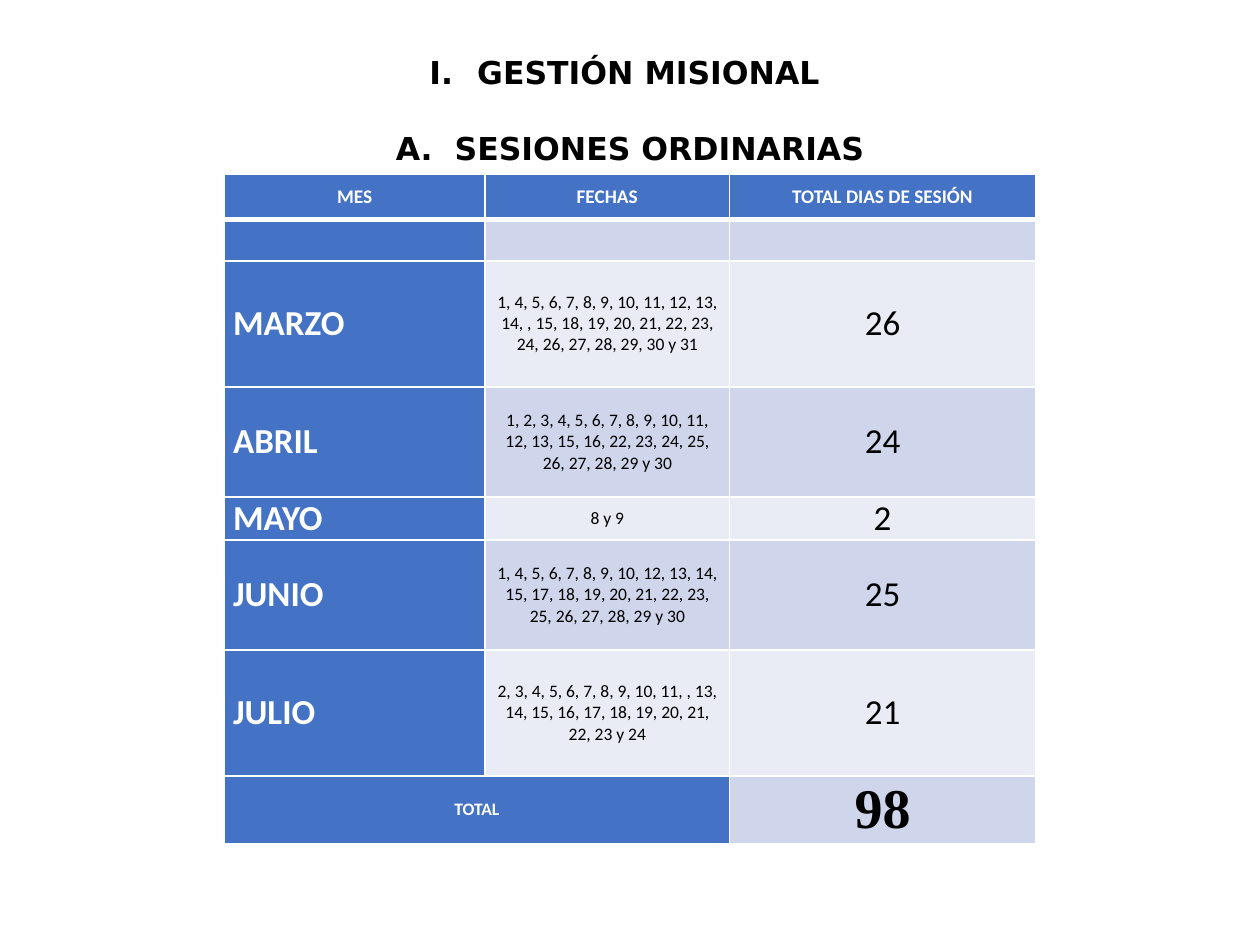
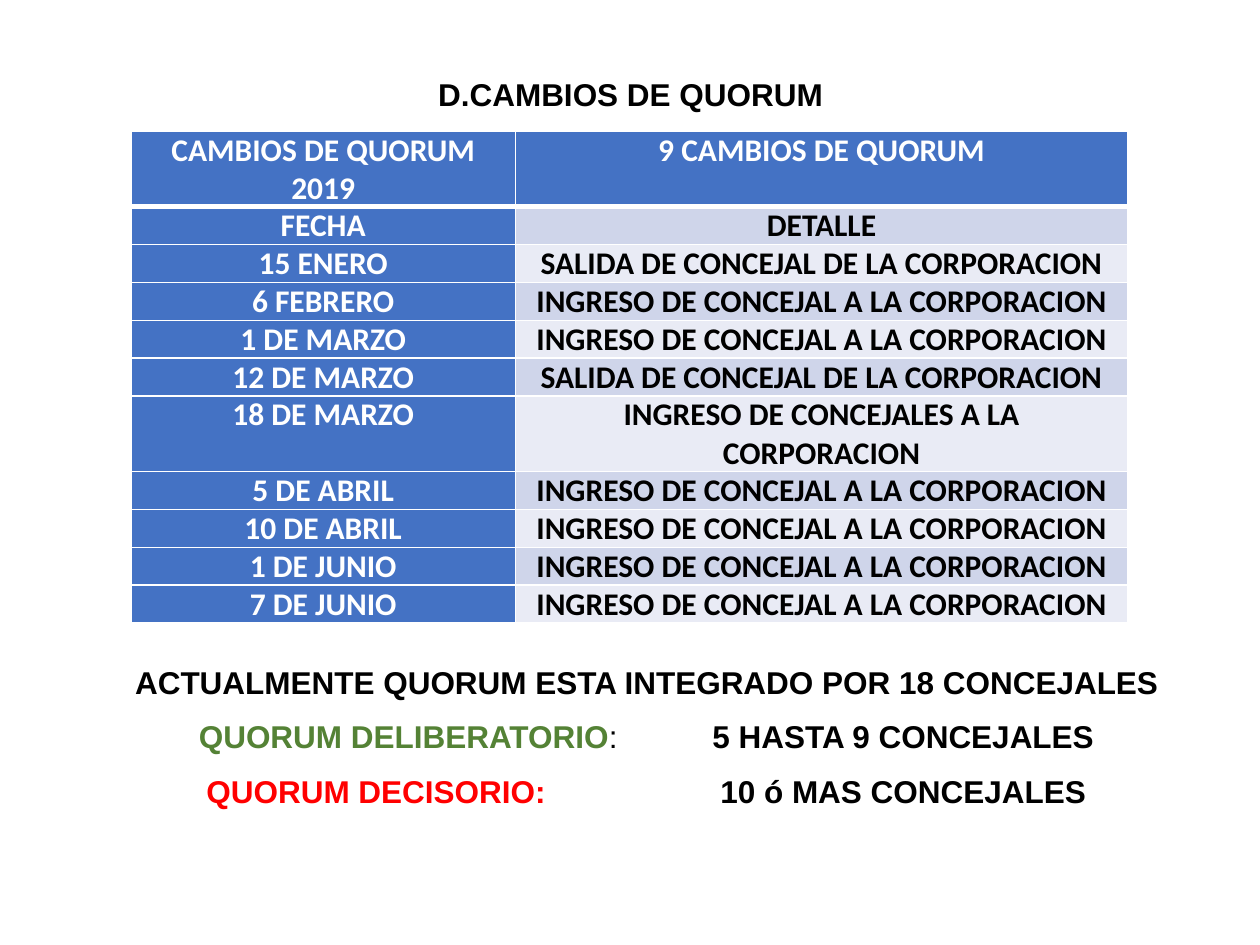
from typing import NamedTuple

from lxml.etree import SubElement
from pptx import Presentation
from pptx.dml.color import RGBColor
from pptx.enum.text import MSO_ANCHOR, PP_ALIGN
from pptx.oxml.ns import qn
from pptx.util import Inches, Pt

UNIT = 0.1
WIDE, HIGH = 100, 75
BLUE, PALE, LIGHT = "4472C4", "CFD5EA", "E9EBF5"
WHITE, BLACK, GREEN, RED = "FFFFFF", "000000", "548235", "FF0000"
MID, LEFT = PP_ALIGN.CENTER, PP_ALIGN.LEFT


class Box(NamedTuple):
    col: float
    row: float
    wide: float
    high: float


class Style(NamedTuple):
    size: float
    color: str = BLACK
    bold: bool = True
    align: PP_ALIGN = MID
    font: str = "Calibri"


class Quorum(NamedTuple):
    label: str
    color: str
    mark: str
    tint: str
    bold: bool
    value: str
    start: float


def grid(count: float) -> int:
    return Inches(round(count * UNIT, 3))


def paint(color: str) -> RGBColor:
    return RGBColor.from_string(color)


def write(para, text: str, size=18, color=BLACK, bold=True, align=MID, font="Arial") -> None:
    run = para.add_run()
    run.text = text
    para.alignment = align
    run.font.size = Pt(size)
    run.font.name = font
    run.font.bold = bold
    run.font.color.rgb = paint(color)


def frame(slide, box: Box, wrap: bool = True):
    text = slide.shapes.add_textbox(*map(grid, box)).text_frame
    text.word_wrap = wrap
    return text


def number(para, kind: str, hang: float) -> None:
    props = para._p.get_or_add_pPr()
    props.set("marL", str(grid(hang)))
    props.set("indent", str(-grid(hang)))
    SubElement(props, qn("a:buFont"), typeface="+mj-lt")
    SubElement(props, qn("a:buAutoNum"), type=kind)


def stops(para, *marks: tuple[float, str]) -> None:
    tabs = SubElement(para._p.get_or_add_pPr(), qn("a:tabLst"))
    for place, kind in marks:
        SubElement(tabs, qn("a:tab"), pos=str(grid(place)), algn=kind)


def edge(cell, head: bool) -> None:
    props = cell._tc.get_or_add_tcPr()
    for side in "LRTB":
        width = 3 if head and side == "B" else 1
        line = SubElement(props, qn(f"a:ln{side}"), w=str(Pt(width)))
        fill = SubElement(line, qn("a:solidFill"))
        SubElement(fill, qn("a:srgbClr"), val=WHITE)


def shade(row: int, col: int) -> str:
    if row == 0 or col == 0:
        return BLUE
    return PALE if row % 2 else LIGHT


def table(slide, box: Box, cols, rows, data, style, anchor):
    grid_table = slide.shapes.add_table(len(rows), len(cols), *map(grid, box)).table
    grid_table.first_row = grid_table.horz_banding = False
    for part, wide in zip(grid_table.columns, cols):
        part.width = grid(wide)
    for part, high in zip(grid_table.rows, rows):
        part.height = grid(high)
    for row, line in enumerate(data):
        for col, text in enumerate(line):
            cell = grid_table.cell(row, col)
            cell.margin_left = cell.margin_right = grid(0.7)
            cell.margin_top = cell.margin_bottom = 0
            cell.vertical_anchor = anchor
            edge(cell, row == 0)
            cell.fill.solid()
            cell.fill.fore_color.rgb = paint(shade(row, col))
            if text:
                write(cell.text_frame.paragraphs[0], text, **style(row, col)._asdict())
    return grid_table


MONTHS = [
    ("MES", "FECHAS", "TOTAL DIAS DE SESIÓN"),
    ("", "", ""),
    ("MARZO", "1, 4, 5, 6, 7, 8, 9, 10, 11, 12, 13, 14, , 15, 18, 19, 20, 21, 22, 23, "
     "24, 26, 27, 28, 29, 30 y 31", "26"),
    ("ABRIL", "1, 2, 3, 4, 5, 6, 7, 8, 9, 10, 11, 12, 13, 15, 16, 22, 23, 24, 25, "
     "26, 27, 28, 29 y 30", "24"),
    ("MAYO", "8 y 9", "2"),
    ("JUNIO", "1, 4, 5, 6, 7, 8, 9, 10, 12, 13, 14, 15, 17, 18, 19, 20, 21, 22, 23, "
     "25, 26, 27, 28, 29 y 30", "25"),
    ("JULIO", "2, 3, 4, 5, 6, 7, 8, 9, 10, 11, , 13, 14, 15, 16, 17, 18, 19, 20, 21, "
     "22, 23 y 24", "21"),
    ("TOTAL", "", "98"),
]
ENTRY = "INGRESO DE CONCEJAL A LA CORPORACION"
EXIT = "SALIDA DE CONCEJAL DE LA CORPORACION"
CHANGES = [
    ("CAMBIOS DE QUORUM 2019", "9 CAMBIOS DE QUORUM"),
    ("FECHA", "DETALLE"),
    ("15 ENERO", EXIT),
    ("6 FEBRERO", ENTRY),
    ("1 DE MARZO", ENTRY),
    ("12 DE MARZO", EXIT),
    ("18 DE MARZO", "INGRESO DE CONCEJALES A LA CORPORACION"),
    ("5 DE ABRIL", ENTRY),
    ("10 DE ABRIL", ENTRY),
    ("1 DE JUNIO", ENTRY),
    ("7 DE JUNIO", ENTRY),
]
QUORUMS = [
    Quorum("QUORUM DELIBERATORIO", GREEN, ":", BLACK, False, "5 HASTA 9 CONCEJALES", 6.3),
    Quorum("QUORUM DECISORIO", RED, ":", RED, True, "10 ó MAS CONCEJALES", 6.9),
]


def month_style(row: int, col: int) -> Style:
    last = len(MONTHS) - 1
    if row == 0:
        return Style(11, WHITE)
    if row == last:
        return Style(32, font="Times New Roman") if col else Style(10, WHITE)
    return (Style(20, WHITE, align=LEFT), Style(10, bold=False), Style(20, bold=False))[col]


def change_style(row: int, col: int) -> Style:
    return Style(18, WHITE if shade(row, col) == BLUE else BLACK)


def sessions(slide) -> None:
    text = frame(slide, Box(25, 3.7, 50, 10))
    heads = [("GESTIÓN MISIONAL ", "romanUcPeriod"), (" SESIONES ORDINARIAS", "alphaUcPeriod")]
    for spot, (head, kind) in enumerate(heads):
        para = text.add_paragraph() if spot else text.paragraphs[0]
        number(para, kind, 3.8)
        if spot:
            para.space_before = Pt(22)
        write(para, head, font="DejaVu Sans")
    rows = [3.6, 3.3, 10, 8.75, 3.4, 8.75, 10, 5.3]
    months = table(slide, Box(17.8, 13.8, 64.4, 53.1), [20.7, 19.4, 24.3], rows,
                   MONTHS, month_style, MSO_ANCHOR.MIDDLE)
    last = len(MONTHS) - 1
    months.cell(last, 0).merge(months.cell(last, 1))


def quorum(slide) -> None:
    title = frame(slide, Box(33.6, 5.5, 32.9, 4), wrap=False)
    write(title.paragraphs[0], "D.CAMBIOS DE QUORUM")
    rows = [6 if row in (0, 6) else 3 for row in range(len(CHANGES))]
    table(slide, Box(10.4, 10.4, 79.1, 39), [30.5, 48.6], rows,
          CHANGES, change_style, MSO_ANCHOR.TOP)
    text = frame(slide, Box(8.5, 51.9, 85.7, 12.8))
    write(text.paragraphs[0], "ACTUALMENTE QUORUM ESTA INTEGRADO POR 18 CONCEJALES")
    for item in QUORUMS:
        para = text.add_paragraph()
        stops(para, (item.start, "l"), (62.2, "ctr"))
        write(para, "\t" + item.label, color=item.color, align=LEFT)
        write(para, item.mark, color=item.tint, bold=item.bold, align=LEFT)
        write(para, "\t" + item.value, align=LEFT)
    for para in text.paragraphs:
        para.line_spacing = 1.07
        para.space_after = Pt(8)


def main() -> None:
    deck = Presentation()
    deck.slide_width, deck.slide_height = grid(WIDE), grid(HIGH)
    for draw in (sessions, quorum):
        draw(deck.slides.add_slide(deck.slide_layouts[6]))
    deck.save("out.pptx")


if __name__ == "__main__":
    main()
